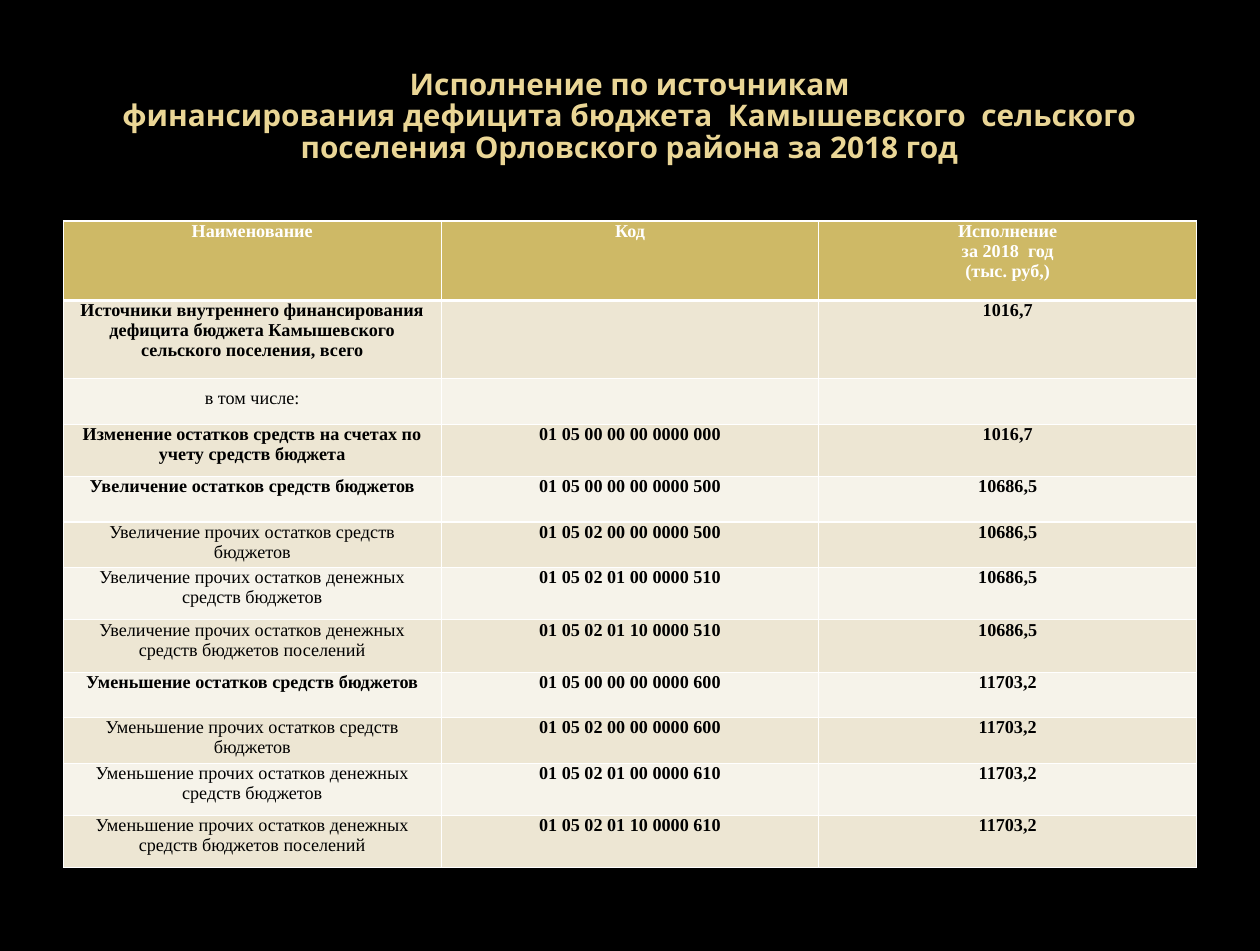
import pptx
import pptx.util
import pptx.dml.color
import pptx.enum.text
from lxml import etree

Inches, Pt = pptx.util.Inches, pptx.util.Pt
RGBColor = pptx.dml.color.RGBColor
PP_ALIGN = pptx.enum.text.PP_ALIGN
MSO_ANCHOR = pptx.enum.text.MSO_ANCHOR

# Content
TITLE = ("Исполнение по источникам\n"
         "финансирования дефицита бюджета  Камышевского  сельского "
         "поселения Орловского района за 2018 год")
HEADER = ("Наименование", "Код", "Исполнение\nза 2018  год\n(тыс. руб,)")
# name, code, amount, name in bold, row height
ROWS = [
    ("Источники внутреннего финансирования дефицита бюджета Камышевского "
     "сельского поселения, всего", "", "1016,7", True, 0.84),
    ("в том числе:", "", "", False, 0.49),
    ("Изменение остатков средств на счетах по учету средств бюджета",
     "01 05 00 00 00 0000 000", "1016,7", True, 0.56),
    ("Увеличение остатков средств бюджетов",
     "01 05 00 00 00 0000 500", "10686,5", True, 0.49),
    ("Увеличение прочих остатков средств бюджетов",
     "01 05 02 00 00 0000 500", "10686,5", False, 0.49),
    ("Увеличение прочих остатков денежных средств бюджетов",
     "01 05 02 01 00 0000 510", "10686,5", False, 0.56),
    ("Увеличение прочих остатков денежных средств бюджетов поселений",
     "01 05 02 01 10 0000 510", "10686,5", False, 0.56),
    ("Уменьшение остатков средств бюджетов",
     "01 05 00 00 00 0000 600", "11703,2", True, 0.49),
    ("Уменьшение прочих остатков средств бюджетов",
     "01 05 02 00 00 0000 600", "11703,2", False, 0.49),
    ("Уменьшение прочих остатков денежных средств бюджетов",
     "01 05 02 01 00 0000 610", "11703,2", False, 0.56),
    ("Уменьшение прочих остатков денежных средств бюджетов поселений",
     "01 05 02 01 10 0000 610", "11703,2", False, 0.56),
]
SPACED_ROW = 2
HEADER_HEIGHT, COLUMN_WIDTH = 0.85, 4.05
LEFT, WIDTH = 0.68, 12.15

# Colours and formats
BLACK = RGBColor(0x00, 0x00, 0x00)
WHITE = RGBColor(0xFF, 0xFF, 0xFF)
GOLD = RGBColor(0xCE, 0xB9, 0x66)
PALE_GOLD = RGBColor(0xEA, 0xD6, 0x96)
BANDS = (RGBColor(0xF6, 0xF3, 0xEA), RGBColor(0xED, 0xE6, 0xD3))
TITLE_FONT = {"name": "Open Sans", "size": Pt(23), "bold": True}
CELL_FONT = {"name": "Times New Roman", "size": Pt(14)}
TITLE_FRAME = {"word_wrap": True, "vertical_anchor": MSO_ANCHOR.MIDDLE,
               "margin_left": Inches(0.14), "margin_right": Inches(0.14),
               "margin_top": Inches(0.07), "margin_bottom": Inches(0.07)}
CELL_FRAME = {"margin_left": Inches(0.07), "margin_right": Inches(0.07),
              "margin_top": 0, "margin_bottom": 0}
DML = "{http://schemas.openxmlformats.org/drawingml/2006/main}"


def apply(target, formats):
    for name, value in formats.items():
        setattr(target, name, value)


def format_paragraph(p, font, color, spacing):
    p.alignment = PP_ALIGN.CENTER
    p.line_spacing = spacing
    for r in p.runs:
        apply(r.font, font)
        r.font.color.rgb = color


def add_borders(cell, widths):
    tc_pr = cell._tc.get_or_add_tcPr()
    for side, width in widths.items():
        ln = etree.SubElement(tc_pr, DML + "ln" + side, w=str(Pt(width)))
        fill = etree.SubElement(ln, DML + "solidFill")
        etree.SubElement(fill, DML + "srgbClr", val=str(WHITE))


def fill_cell(cell, text, row, bold):
    apply(cell, CELL_FRAME)
    add_borders(cell, {"L": 1, "R": 1, "T": 3 if row == 1 else 1,
                       "B": 3 if row == 0 else 1})
    cell.fill.solid()
    cell.fill.fore_color.rgb = BANDS[row % 2] if row else GOLD
    cell.text_frame.text = text
    for p in cell.text_frame.paragraphs:
        format_paragraph(p, {**CELL_FONT, "bold": bold},
                         BLACK if row else WHITE,
                         1.5 if row == SPACED_ROW else 1.0)


def main():
    prs = pptx.Presentation()
    prs.slide_width, prs.slide_height = Inches(13.51), Inches(10.2)
    s = prs.slides.add_slide(prs.slide_layouts[6])
    s.background.fill.solid()
    s.background.fill.fore_color.rgb = BLACK

    # Title
    tf = s.shapes.add_textbox(Inches(LEFT), Inches(0.41),
                              Inches(WIDTH), Inches(1.7)).text_frame
    apply(tf, TITLE_FRAME)
    p = tf.paragraphs[0]
    p.text = TITLE
    format_paragraph(p, TITLE_FONT, PALE_GOLD, 0.88)

    # Table
    lines = [(*HEADER, True, HEADER_HEIGHT)] + ROWS
    height = sum(line[-1] for line in lines)
    table = s.shapes.add_table(len(lines), len(HEADER), Inches(LEFT), Inches(2.37),
                               Inches(WIDTH), Inches(height)).table
    for column in table.columns:
        column.width = Inches(COLUMN_WIDTH)
    for i, (name, code, amount, bold, row_height) in enumerate(lines):
        table.rows[i].height = Inches(row_height)
        for j, text in enumerate((name, code, amount)):
            fill_cell(table.cell(i, j), text, i, bold or j > 0)

    prs.save("out.pptx")


if __name__ == "__main__":
    main()
